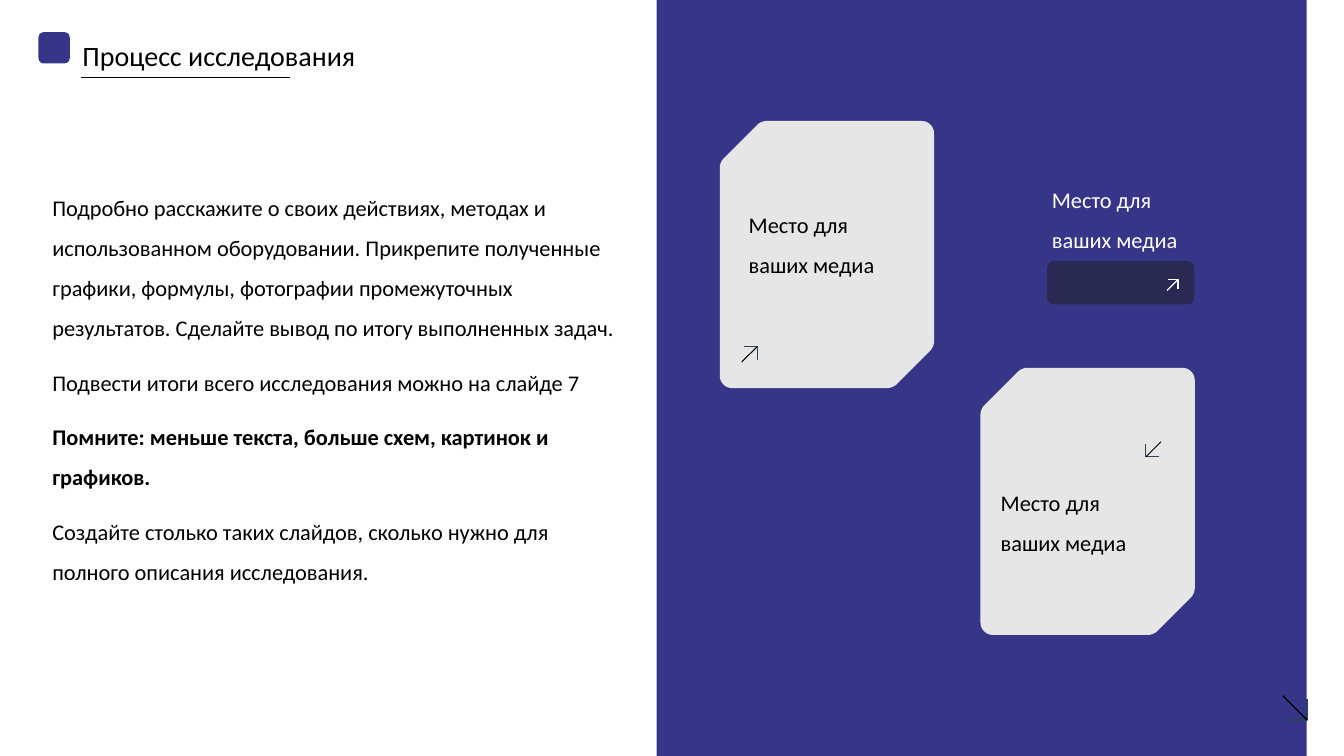
from dataclasses import dataclass
from math import copysign, hypot

from lxml import etree
from pptx import Presentation
from pptx.dml.color import RGBColor
from pptx.enum import shapes, text
from pptx.oxml import ns
from pptx.shapes.base import BaseShape
from pptx.util import Cm, Pt

COLOURS = {
    "indigo": "373588",
    "card": "E6E6E6",
    "button": "1E1E1E",
    "hook": "28445D",
    "black": "000000",
    "white": "FFFFFF",
}
FONT = "Calibri"
MEDIA_TEXT = "Место для ваших медиа"
CARD_WIDTH, CARD_HEIGHT, CARD_CUT = 5.4, 6.73, 1.04
SQUARE_ROUNDING, CUT_ROUNDING = 0.31, 0.13

Point = tuple[float, float]


@dataclass
class TextBlock:
    left: float
    top: float
    width: float
    height: float
    paragraphs: list[str]
    colour: str = "black"
    size: int = 16
    spacing: float = 1.5
    before: int = 10
    anchor: text.MSO_ANCHOR = text.MSO_ANCHOR.TOP
    bold_index: int = -1


@dataclass
class Arrow:
    tail: Point
    tip: Point
    hook: float
    weight: float = 0.75
    shaft_colour: str = "black"
    hook_colour: str = "hook"


CARDS = [(18.14, 3.05), (24.71, 9.27)]
TEXTS = [
    TextBlock(1.83, -2.24, 17.09, 7.29, ["Процесс исследования"], size=20,
              spacing=1, before=0, anchor=text.MSO_ANCHOR.MIDDLE),
    TextBlock(1.07, 4.42, 14.81, 13.11, [
        "Подробно расскажите о своих действиях, методах и использованном "
        "оборудовании. Прикрепите полученные графики, формулы, фотографии "
        "промежуточных результатов. Сделайте вывод по итогу выполненных задач.",
        "Подвести итоги всего исследования можно на слайде 7",
        "Помните: меньше текста, больше схем, картинок и графиков.",
        "Создайте столько таких слайдов, сколько нужно для полного описания "
        "исследования.",
    ], bold_index=2),
    TextBlock(24.97, 11.86, 4.47, 3.45, [MEDIA_TEXT]),
    TextBlock(26.26, 4.22, 4.47, 3.45, [MEDIA_TEXT], colour="white"),
    TextBlock(18.62, 4.85, 4.47, 3.45, [MEDIA_TEXT]),
]
ARROWS = [
    Arrow((32.33, 17.53), (32.94, 18.14), 0.53, weight=1),
    Arrow((29.26, 11.13), (28.88, 11.51), 0.33),
    Arrow((18.69, 9.12), (19.08, 8.74), 0.33),
]
BUTTON_ARROW = Arrow((29.41, 7.32), (29.69, 7.04), 0.25, 1, "white", "white")


def colour_of(name: str) -> RGBColor:
    return RGBColor.from_string(COLOURS[name])


def fill_shape(shape: BaseShape, colour: str) -> None:
    shape.shadow.inherit = False
    shape.fill.solid()
    shape.fill.fore_color.rgb = colour_of(colour)
    shape.line.fill.background()


def add_rounded(canvas, left: float, top: float, width: float, height: float,
                colour: str, rounding: float) -> BaseShape:
    shape = canvas.add_shape(shapes.MSO_SHAPE.ROUNDED_RECTANGLE,
                             Cm(left), Cm(top), Cm(width), Cm(height))
    shape.adjustments[0] = rounding
    fill_shape(shape, colour)
    return shape


def add_outline(canvas, points: list[Point], close: bool) -> BaseShape:
    places = [(Cm(x), Cm(y)) for x, y in points]
    builder = canvas.build_freeform(*places[0])
    builder.add_line_segments(places[1:], close=close)
    return builder.convert_to_shape()


def toward(start: Point, end: Point, distance: float) -> Point:
    share = distance / hypot(end[0] - start[0], end[1] - start[1])
    return (start[0] + (end[0] - start[0]) * share,
            start[1] + (end[1] - start[1]) * share)


def round_corner(before: Point, corner: Point, after: Point,
                 radius: float, steps: int = 8) -> list[Point]:
    """Sample a cubic curve that rounds one corner."""
    start, end = toward(corner, before, radius), toward(corner, after, radius)
    controls = (start, toward(start, corner, radius * 0.55),
                toward(end, corner, radius * 0.55), end)
    points = []
    for step in range(steps + 1):
        t = step / steps
        weights = ((1 - t) ** 3, 3 * t * (1 - t) ** 2, 3 * t * t * (1 - t), t ** 3)
        points.append((sum(w * c[0] for w, c in zip(weights, controls)),
                       sum(w * c[1] for w, c in zip(weights, controls))))
    return points


def add_card(canvas, left: float, top: float) -> None:
    right, bottom = left + CARD_WIDTH, top + CARD_HEIGHT
    corners = [(left + CARD_CUT, top), (right, top), (right, bottom - CARD_CUT),
               (right - CARD_CUT, bottom), (left, bottom), (left, top + CARD_CUT)]
    points = []
    for index, corner in enumerate(corners):
        radius = SQUARE_ROUNDING if index in (1, 4) else CUT_ROUNDING
        points += round_corner(corners[index - 1], corner,
                               corners[(index + 1) % len(corners)], radius)
    fill_shape(add_outline(canvas, points, close=True), "card")


def add_line(canvas, start: Point, end: Point, colour: str, weight: float) -> None:
    line = canvas.add_connector(shapes.MSO_CONNECTOR.STRAIGHT,
                                Cm(start[0]), Cm(start[1]), Cm(end[0]), Cm(end[1]))
    line.line.color.rgb = colour_of(colour)
    line.line.width = Pt(weight)
    etree.SubElement(line._element.spPr, ns.qn("a:effectLst"))


def add_arrow(canvas, arrow: Arrow) -> None:
    x, y = arrow.tip
    side_x = x - copysign(arrow.hook, x - arrow.tail[0])
    side_y = y - copysign(arrow.hook, y - arrow.tail[1])
    hook = add_outline(canvas, [(side_x, y), (x, y), (x, side_y)], close=False)
    hook.shadow.inherit = False
    hook.fill.background()
    hook.line.color.rgb = colour_of(arrow.hook_colour)
    hook.line.width = Pt(arrow.weight)
    add_line(canvas, arrow.tail, arrow.tip, arrow.shaft_colour, arrow.weight)


def add_text(canvas, block: TextBlock) -> None:
    box = canvas.add_textbox(Cm(block.left), Cm(block.top),
                             Cm(block.width), Cm(block.height))
    frame = box.text_frame
    frame.word_wrap = True
    frame.vertical_anchor = block.anchor
    frame.text = "\n".join(block.paragraphs)
    for index, para in enumerate(frame.paragraphs):
        para.line_spacing = block.spacing
        para.space_before = Pt(block.before)
        for span in para.runs:
            span.font.name = FONT
            span.font.size = Pt(block.size)
            span.font.bold = index == block.bold_index
            span.font.color.rgb = colour_of(block.colour)


def main() -> None:
    deck = Presentation()
    deck.slide_width, deck.slide_height = Cm(33.87), Cm(19.05)
    page = deck.slides.add_slide(deck.slide_layouts[6])
    canvas = page.shapes

    # Media panel and cards
    panel = add_rounded(canvas, 12.85, 0.53, 23.77, 16.38, "indigo", 0.09)
    panel.rotation = 90
    for left, top in CARDS:
        add_card(canvas, left, top)

    # Arrows
    for arrow in ARROWS:
        add_arrow(canvas.add_group_shape().shapes, arrow)

    # Translucent button
    button_group = canvas.add_group_shape().shapes
    button = add_rounded(button_group, 26.39, 6.58, 3.71, 1.09, "button", 0.16)
    tint = button._element.spPr.find(ns.qn("a:solidFill"))[0]
    etree.SubElement(tint, ns.qn("a:alpha"), val="50000")
    add_arrow(button_group, BUTTON_ARROW)

    # Title marker and underline
    add_rounded(canvas, 0.97, 0.81, 0.79, 0.79, "indigo", 0.17)
    add_line(canvas, (2.03, 1.96), (7.32, 1.96), "black", 0.5)

    # Texts
    for block in TEXTS:
        add_text(canvas, block)

    deck.save("out.pptx")


if __name__ == "__main__":
    main()
